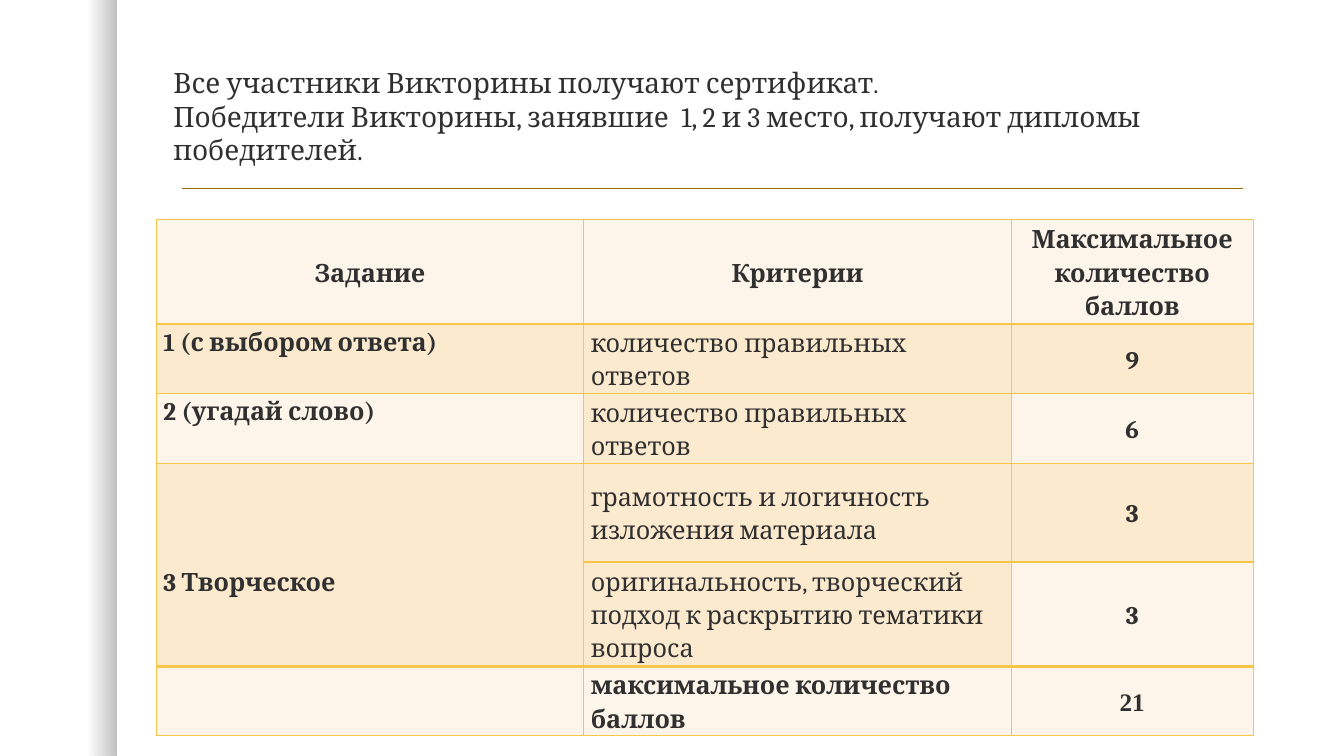
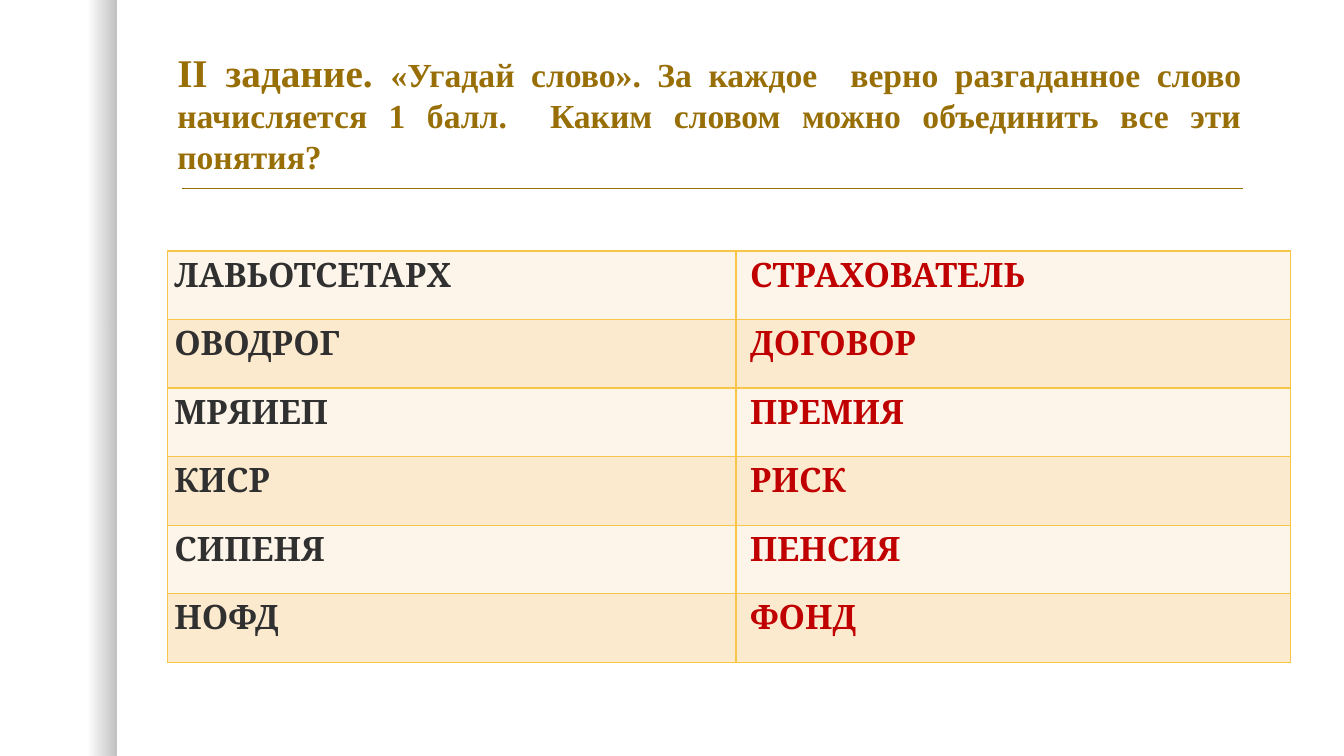
import lxml.etree
import pptx
import pptx.dml.color
import pptx.enum.shapes
import pptx.enum.text
import pptx.oxml.ns
import pptx.util

Inches = pptx.util.Inches
Pt = pptx.util.Pt
RGBColor = pptx.dml.color.RGBColor
Align = pptx.enum.text.PP_ALIGN
Anchor = pptx.enum.text.MSO_ANCHOR
qn = pptx.oxml.ns.qn

BLACK = RGBColor(0x00, 0x00, 0x00)
DARK = RGBColor(0x30, 0x30, 0x30)
OLIVE = RGBColor(0x98, 0x6F, 0x07)
RED = RGBColor(0xC0, 0x00, 0x00)
GOLD = RGBColor(0xF7, 0xC5, 0x47)
CREAM = RGBColor(0xFD, 0xF5, 0xE9)
PEACH = RGBColor(0xFC, 0xEA, 0xCF)
SERIF = "Cambria"
TIMES = "Times New Roman"


def write_text(paragraph, text, size=18, font=SERIF, color=DARK, bold=False,
               align=Align.LEFT, spacing=1.0):
    paragraph.alignment = align
    paragraph.line_spacing = spacing
    run = paragraph.add_run()
    run.text = text
    run.font.size = Pt(size)
    run.font.name = font
    run.font.color.rgb = color
    run.font.bold = bold


def style_cell(cell, fill, anchor=Anchor.TOP, left=0.07, top=0, top_border=1):
    cell.margin_left, cell.margin_right = Inches(left), Inches(0.07)
    cell.margin_top, cell.margin_bottom = Inches(top), Inches(0)
    cell.vertical_anchor = anchor
    properties = cell._tc.get_or_add_tcPr()
    for side, width in (("L", 1), ("R", 1), ("T", top_border), ("B", 1)):
        border = lxml.etree.SubElement(properties, qn(f"a:ln{side}"), w=str(Pt(width)))
        solid = lxml.etree.SubElement(border, qn("a:solidFill"))
        lxml.etree.SubElement(solid, qn("a:srgbClr"), val=str(GOLD))
    cell.fill.solid()
    cell.fill.fore_color.rgb = fill


presentation = pptx.Presentation()
presentation.slide_width = Inches(13.33)
presentation.slide_height = Inches(7.5)

layouts = [
    {"title": (1.62, 0.6, 11.58, 1.2), "table": (1.55, 2.18),
     "columns": [4.24, 4.24, 2.4], "rows": [1, 0.66, 0.66, 0.98, 1, 0.66]},
    {"title": (1.66, 0.43, 10.75, 1.35), "table": (1.66, 2.49),
     "columns": [5.64, 5.5], "rows": [0.68] * 6},
]
titles, tables = [], []
for layout in layouts:
    slide = presentation.slides.add_slide(presentation.slide_layouts[6])

    band = slide.shapes.add_shape(pptx.enum.shapes.MSO_SHAPE.RECTANGLE,
                                  Inches(0), Inches(0), Inches(1.16), Inches(7.5))
    band.shadow.inherit = False
    band.line.fill.background()
    band.fill.gradient()
    band.fill.gradient_angle = 0
    for stop, position in zip(band.fill.gradient_stops, (0.75, 1)):
        stop.position = position
        stop.color.rgb = BLACK
    stop_colors = band._element.spPr.iter(qn("a:srgbClr"))
    for stop_color, alpha in zip(stop_colors, ("0", "25000")):
        lxml.etree.SubElement(stop_color, qn("a:alpha"), val=alpha)

    rule = slide.shapes.add_connector(pptx.enum.shapes.MSO_CONNECTOR.STRAIGHT,
                                      Inches(1.81), Inches(1.87), Inches(12.33), Inches(1.87))
    rule.line.color.rgb = OLIVE
    rule.line.width = Pt(1)
    lxml.etree.SubElement(rule._element.spPr, qn("a:effectLst"))

    title = slide.shapes.add_textbox(*map(Inches, layout["title"])).text_frame
    title.word_wrap = True
    titles.append(title)

    columns, rows = layout["columns"], layout["rows"]
    left, top = layout["table"]
    table = slide.shapes.add_table(len(rows), len(columns), Inches(left), Inches(top),
                                   Inches(sum(columns)), Inches(sum(rows))).table
    table.first_row = False
    table.horz_banding = False
    for column, width in zip(table.columns, columns):
        column.width = Inches(width)
    for row, height in zip(table.rows, rows):
        row.height = Inches(height)
    tables.append(table)

rules_title, task_title = titles
scores, words = tables

write_text(rules_title.paragraphs[0], "Все участники Викторины получают сертификат", size=20)
write_text(rules_title.paragraphs[0], ".", size=18)
write_text(rules_title.add_paragraph(),
           "Победители Викторины, занявшие  1, 2 и 3 место, получают дипломы победителей.",
           size=20)

score_rows = [
    ("Задание", "Критерии", "Максимальное количество баллов"),
    ("1 (с выбором ответа)", "количество правильных ответов", "9"),
    ("2 (угадай слово)", "количество правильных ответов", "6"),
    ("3 Творческое", "грамотность и логичность изложения материала", "3"),
    ("", "оригинальность, творческий подход к раскрытию тематики вопроса", "3"),
    ("", "максимальное количество баллов", "21"),
]
last = len(score_rows) - 1
for row_index, row in enumerate(score_rows):
    for column_index, text in enumerate(row):
        cell = scores.cell(row_index, column_index)
        heading = row_index in (0, last)
        criterion = column_index == 1 and not heading
        task = column_index == 0 and row_index in (1, 2)
        style_cell(cell, PEACH if criterion or row_index % 2 else CREAM,
                   anchor=Anchor.TOP if task else Anchor.MIDDLE,
                   top=0.32 if text == "3 Творческое" else 0,
                   top_border=2 if row_index == last else 1)
        if row_index == last:
            cell.fill.fore_color.rgb = CREAM
        if text:
            centred = row_index == 0 or column_index == 2
            write_text(cell.text_frame.paragraphs[0], text, bold=not criterion,
                       font=TIMES if text == "21" else SERIF,
                       align=Align.CENTER if centred else Align.LEFT, spacing=1.15)
scores.cell(4, 2).fill.fore_color.rgb = CREAM
scores.cell(3, 0).merge(scores.cell(4, 0))

for text, size in (
    ("II задание. ", 28),
    ("«Угадай слово». За каждое  верно разгаданное слово начисляется 1 балл.  "
     "Каким словом можно объединить все эти понятия?", 24),
):
    write_text(task_title.paragraphs[0], text, size=size, font=TIMES, color=OLIVE,
               bold=True, align=Align.JUSTIFY)

word_pairs = [
    ("ЛАВЬОТСЕТАРХ", "СТРАХОВАТЕЛЬ"),
    ("ОВОДРОГ", "ДОГОВОР"),
    ("МРЯИЕП", "ПРЕМИЯ"),
    ("КИСР", "РИСК"),
    ("СИПЕНЯ", "ПЕНСИЯ"),
    ("НОФД", "ФОНД"),
]
for row_index, pair in enumerate(word_pairs):
    for column_index, (text, color, left) in enumerate(zip(pair, (DARK, RED), (0.07, 0.14))):
        cell = words.cell(row_index, column_index)
        style_cell(cell, PEACH if row_index % 2 else CREAM, left=left)
        write_text(cell.text_frame.paragraphs[0], text, size=24, color=color,
                   bold=True, spacing=1.15)

presentation.save("out.pptx")
